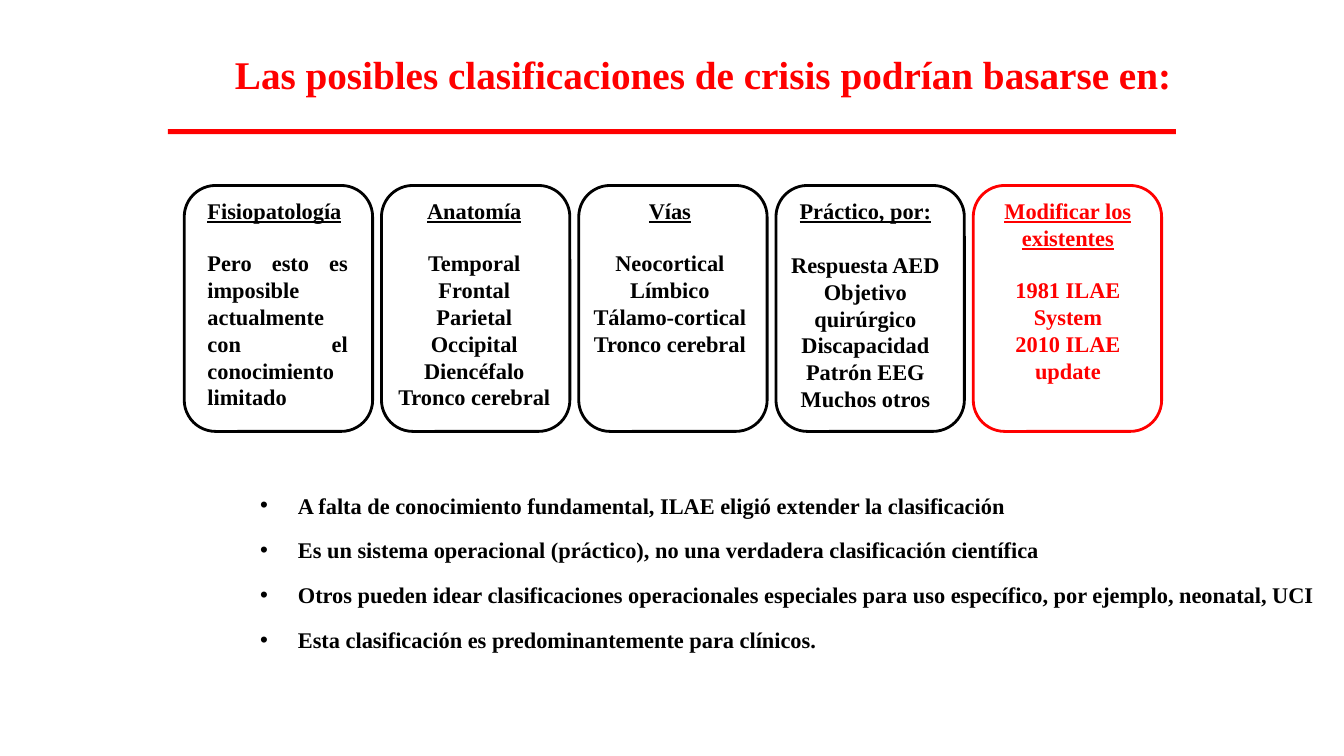
from dataclasses import dataclass

from lxml import etree
from pptx import Presentation
from pptx.dml.color import RGBColor
from pptx.enum import shapes, text
from pptx.oxml import ns
from pptx.util import Pt

RED = RGBColor(0xFF, 0x00, 0x00)
BLACK = RGBColor(0x00, 0x00, 0x00)
FONT = "Times New Roman"

CARD_LEFT, CARD_TOP, CARD_PITCH = 131.6, 132.5, 140.9
CARD_WIDTH, CARD_HEIGHT = 134.6, 175.7
TEXT_TOP, TEXT_HEIGHT = 137.3, 161.5
BULLET_INDENT = 27


@dataclass
class Card:
    heading: str
    lines: list[str]
    text_left: float
    text_width: float
    wrap: bool = True
    color: RGBColor = BLACK
    alignment: text.PP_ALIGN = text.PP_ALIGN.CENTER
    heading_alignment: text.PP_ALIGN = text.PP_ALIGN.CENTER
    gap: float = 18


CARDS = [
    Card("Fisiopatología",
         ["Pero esto es imposible actualmente con el conocimiento limitado"],
         141.1, 114.5, alignment=text.PP_ALIGN.JUSTIFY,
         heading_alignment=text.PP_ALIGN.LEFT),
    Card("Anatomía",
         ["Temporal", "Frontal", "Parietal", "Occipital", "Diencéfalo",
          "Tronco cerebral"],
         276.5, 124.6, wrap=False),
    Card("Vías",
         ["Neocortical", "Límbico", "Tálamo-cortical", "Tronco cerebral"],
         416.2, 124.6, wrap=False),
    Card("Práctico, por:",
         ["Respuesta AED", "Objetivo quirúrgico", "Discapacidad",
          "Patrón EEG", "Muchos otros"],
         544.3, 147.6, gap=19.2),
    Card("Modificar los existentes", ["1981 ILAE System", "2010 ILAE update"],
         699.8, 126, color=RED),
]

CONCLUSIONS = [
    "A falta de conocimiento fundamental, ILAE eligió extender la clasificación",
    "Es un sistema operacional (práctico), no una verdadera clasificación científica",
    "Otros pueden idear clasificaciones operacionales especiales para uso "
    "específico, por ejemplo, neonatal, UCI",
    "Esta clasificación es predominantemente para clínicos.",
]


def place(shape, left: float, top: float, width: float, height: float) -> None:
    shape.left, shape.top = Pt(left), Pt(top)
    shape.width, shape.height = Pt(width), Pt(height)


def prepare_frame(frame, wrap: bool) -> None:
    frame.word_wrap = wrap
    frame.auto_size = text.MSO_AUTO_SIZE.SHAPE_TO_FIT_TEXT
    frame.vertical_anchor = text.MSO_ANCHOR.TOP


def write(frame, content: str, *, size: float = 16, color: RGBColor = BLACK,
          underline: bool = False, alignment=text.PP_ALIGN.LEFT,
          space_before: float = 0, line_spacing=1.0):
    """Fill the frame's first paragraph if it is empty, otherwise add one."""
    first = frame.paragraphs[0]
    paragraph = frame.add_paragraph() if first.runs else first
    paragraph.alignment = alignment
    paragraph.space_before = Pt(space_before)
    paragraph.line_spacing = line_spacing
    run = paragraph.add_run()
    run.text = content
    font = run.font
    font.name, font.size, font.bold = FONT, Pt(size), True
    font.underline = underline
    font.color.rgb = color
    return paragraph


def add_bullet(paragraph) -> None:
    properties = paragraph._p.get_or_add_pPr()
    properties.set("marL", str(Pt(BULLET_INDENT)))
    properties.set("indent", str(-Pt(BULLET_INDENT)))
    etree.SubElement(properties, ns.qn("a:buFont"), typeface="Arial")
    etree.SubElement(properties, ns.qn("a:buChar"), char="•")


def draw_title(slide) -> None:
    title = slide.shapes.title
    place(title, 160.6, 32.4, 690.5, 41)
    prepare_frame(title.text_frame, wrap=False)
    write(title.text_frame,
          "Las posibles clasificaciones de crisis podrían basarse en:",
          size=28, color=RED)

    rule = slide.shapes.add_shape(shapes.MSO_SHAPE.RECTANGLE,
                                  Pt(120), Pt(92.2), Pt(720), Pt(3.6))
    rule.shadow.inherit = False
    rule.fill.solid()
    rule.fill.fore_color.rgb = RED
    rule.line.fill.background()


def draw_card(slide, card: Card, index: int) -> None:
    outline = slide.shapes.add_shape(
        shapes.MSO_SHAPE.ROUNDED_RECTANGLE,
        Pt(CARD_LEFT + index * CARD_PITCH), Pt(CARD_TOP),
        Pt(CARD_WIDTH), Pt(CARD_HEIGHT))
    outline.shadow.inherit = False
    outline.fill.background()
    outline.line.color.rgb = card.color
    outline.line.width = Pt(2)

    box = slide.shapes.add_textbox(Pt(card.text_left), Pt(TEXT_TOP),
                                   Pt(card.text_width), Pt(TEXT_HEIGHT))
    prepare_frame(box.text_frame, card.wrap)
    write(box.text_frame, card.heading, color=card.color, underline=True,
          alignment=card.heading_alignment)
    for number, line in enumerate(card.lines):
        write(box.text_frame, line, color=card.color, alignment=card.alignment,
              space_before=0 if number else card.gap)


def draw_conclusions(slide) -> None:
    body = slide.placeholders[1]
    place(body, 178.6, 334.8, 777.6, 136.8)
    prepare_frame(body.text_frame, wrap=False)
    for conclusion in CONCLUSIONS:
        add_bullet(write(body.text_frame, conclusion, line_spacing=Pt(32)))


def main() -> None:
    presentation = Presentation()
    presentation.slide_width, presentation.slide_height = Pt(960), Pt(540)
    slide = presentation.slides.add_slide(presentation.slide_layouts[1])
    draw_title(slide)
    for index, card in enumerate(CARDS):
        draw_card(slide, card, index)
    draw_conclusions(slide)
    presentation.save("out.pptx")


if __name__ == "__main__":
    main()
